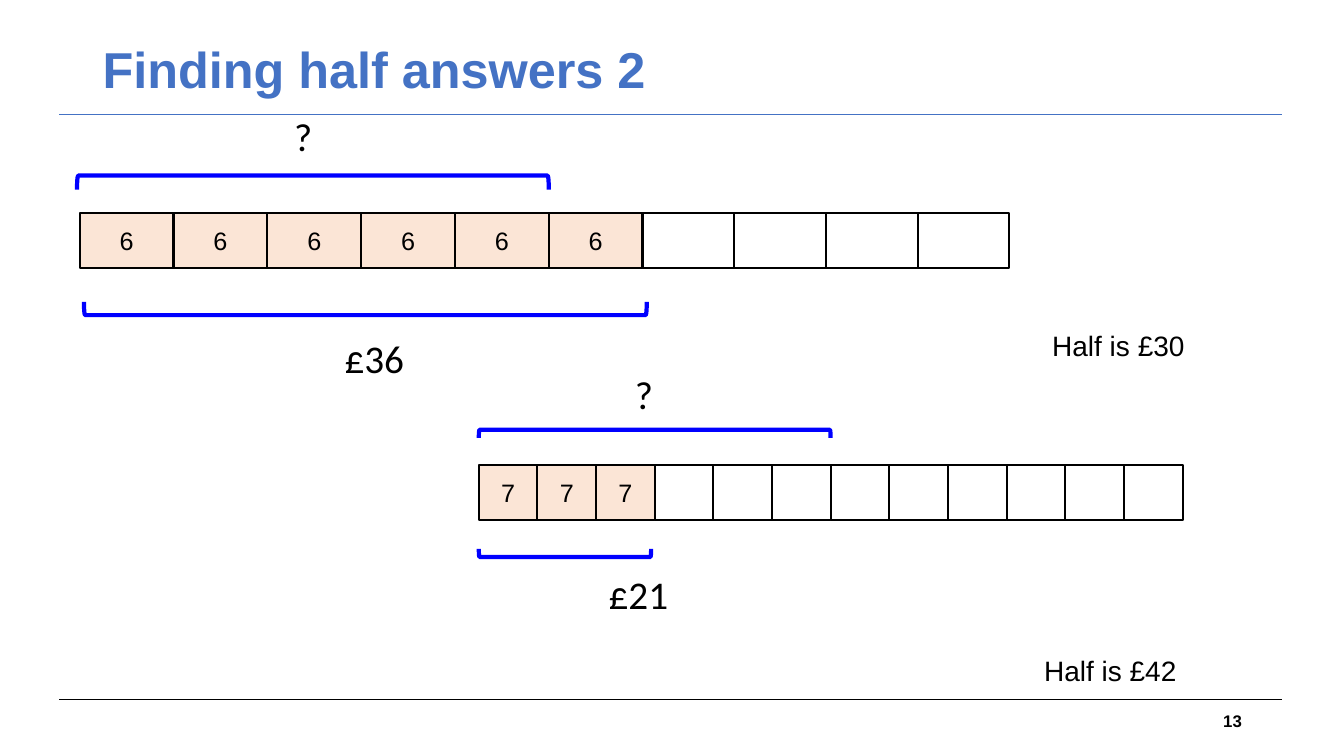
import pptx
import pptx.util
import pptx.dml.color
import pptx.enum.shapes
import pptx.enum.text
import pptx.oxml

Pt = pptx.util.Pt
ALIGN = pptx.enum.text.PP_ALIGN
ANCHOR = pptx.enum.text.MSO_ANCHOR
SHAPE = pptx.enum.shapes.MSO_SHAPE

BLACK, WHITE, BLUE, PEACH, HEADING = "000000", "FFFFFF", "0000FF", "FBE5D6", "4472C4"
CELL_HEIGHT = 39.6
NO_EFFECTS = '<a:effectLst xmlns:a="http://schemas.openxmlformats.org/drawingml/2006/main"/>'


def color(value):
    return pptx.dml.color.RGBColor.from_string(value)


def write(frame, text, size, font="Arial", ink=BLACK, bold=False,
          align=ALIGN.LEFT, anchor=ANCHOR.TOP):
    frame.text = text
    frame.word_wrap = True
    frame.vertical_anchor = anchor
    paragraph = frame.paragraphs[0]
    paragraph.alignment = align
    paragraph.font.name = font
    paragraph.font.size = Pt(size)
    paragraph.font.bold = bold
    paragraph.font.color.rgb = color(ink)
    return paragraph


def add_label(slide, box, text, size, **style):
    label = slide.shapes.add_textbox(*map(Pt, box))
    write(label.text_frame, text, size, **style)


def add_rule(slide, y, ink):
    rule = slide.shapes.add_connector(
        pptx.enum.shapes.MSO_CONNECTOR.STRAIGHT, Pt(42.5), Pt(y), Pt(916), Pt(y))
    rule.line.color.rgb = color(ink)
    rule.line.width = Pt(0.75)
    rule._element.spPr.append(pptx.oxml.parse_xml(NO_EFFECTS))


def add_cell(slide, left, top, width, fill, text=""):
    cell = slide.shapes.add_shape(
        SHAPE.RECTANGLE, Pt(left), Pt(top), Pt(width), Pt(CELL_HEIGHT))
    cell.shadow.inherit = False
    cell.fill.solid()
    cell.fill.fore_color.rgb = color(fill)
    cell.line.color.rgb = color(BLACK)
    cell.line.width = Pt(1.5)
    if text:
        write(cell.text_frame, text, 18, align=ALIGN.CENTER, anchor=ANCHOR.MIDDLE)


def add_bracket(slide, left, top, width, depth, rotation):
    """Lay a left bracket on its side so that it fills the given box."""
    bracket = slide.shapes.add_shape(
        SHAPE.LEFT_BRACKET, Pt(left + (width - depth) / 2),
        Pt(top + (depth - width) / 2), Pt(depth), Pt(width))
    bracket.rotation = rotation
    bracket.shadow.inherit = False
    bracket.fill.background()
    bracket.line.color.rgb = color(BLUE)
    bracket.line.width = Pt(3)


def add_heading(slide, title):
    heading = slide.shapes.title
    heading.left, heading.top, heading.width, heading.height = map(Pt, (66.2, 28.8, 828, 104.4))
    paragraph = write(heading.text_frame, title, 36, ink=HEADING, bold=True)
    paragraph.line_spacing = 0.9
    add_rule(slide, 82.1, HEADING)


def add_footer(slide, number):
    add_rule(slide, 499.7, BLACK)
    add_label(slide, (678.2, 500.4, 216, 28.8), number, 12, bold=True,
              align=ALIGN.RIGHT, anchor=ANCHOR.MIDDLE)


def add_bar_problem(slide, left, top, share, shaded, blank, upper, lower,
                    unknown_at, total, total_at, answer, answer_at):
    """Draw one bar model; shaded and blank are (count, width), all else is
    measured from the bar's top left corner."""
    shaded_count, shaded_width = shaded
    blank_count, blank_width = blank
    for i in range(shaded_count):
        add_cell(slide, left + i * shaded_width, top, shaded_width, PEACH, share)
    blank_left = left + shaded_count * shaded_width
    for i in range(blank_count):
        add_cell(slide, blank_left + i * blank_width, top, blank_width, WHITE)

    for (dx, dy, width, depth), rotation in ((upper, 90), (lower, 270)):
        add_bracket(slide, left + dx, top + dy, width, depth, rotation)

    for text, (dx, dy), width, height, size, font in (
            ("?", unknown_at, 27.4, 41, 28, "Calibri"),
            (total, total_at, 63.4, 41, 28, "Calibri"),
            (answer, answer_at, 160, 31.7, 20, "Arial")):
        add_label(slide, (left + dx, top + dy, width, height), text, size, font=font)


def main():
    deck = pptx.Presentation()
    deck.slide_width, deck.slide_height = Pt(960), Pt(540)
    slide = deck.slides.add_slide(deck.slide_layouts.get_by_name("Title Only"))
    add_heading(slide, "Finding half answers 2")
    add_bar_problem(
        slide, 57, 152, "6", shaded=(6, 67), blank=(4, 65.5),
        upper=(-2, -26.6, 337, 10), lower=(3, 63.7, 402, 9.4),
        unknown_at=(146, -75), total="£36", total_at=(182, 83.5),
        answer="Half is £30", answer_at=(687.5, 79.2))
    add_bar_problem(
        slide, 342, 332, "7", shaded=(3, 41.9), blank=(9, 41.9),
        upper=(0, -25, 251.3, 5.8), lower=(0, 60, 123.1, 5.8),
        unknown_at=(104.4, -71.3), total="£21", total_at=(85.7, 72),
        answer="Half is £42", answer_at=(396.7, 131))
    add_footer(slide, "13")
    deck.save("out.pptx")


if __name__ == "__main__":
    main()
